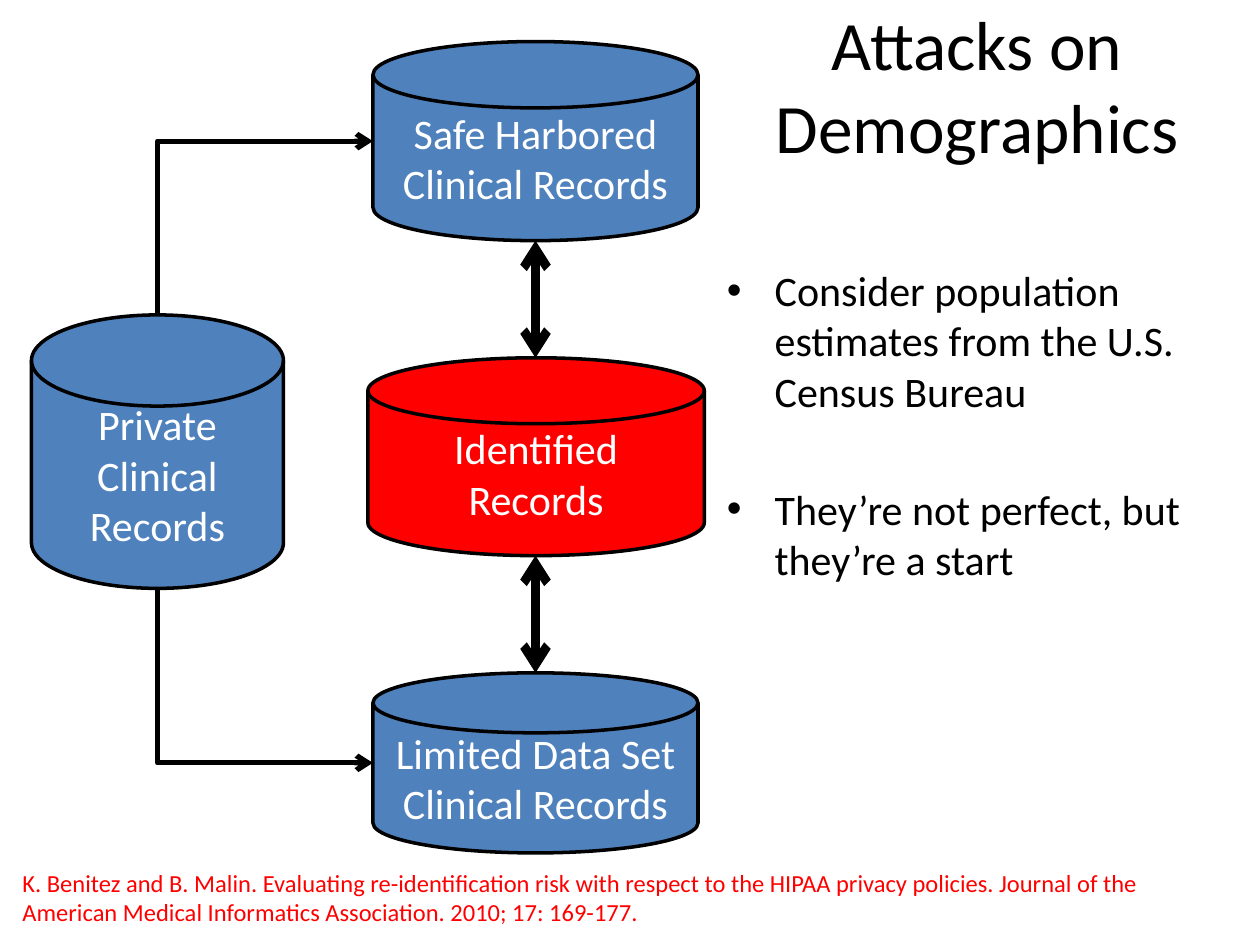
from dataclasses import dataclass

from pptx import Presentation
from pptx import util as u
from pptx.dml.color import RGBColor
from pptx.enum import shapes, text
from pptx.oxml.ns import qn
from lxml import etree

COLORS = {"black": "000000", "white": "FFFFFF", "blue": "4F81BD", "red": "FF0000"}


@dataclass(frozen=True)
class Store:
    lines: tuple[str, ...]
    left: float
    top: float
    width: float
    height: float
    fill: str = "blue"

    @property
    def center(self) -> float:
        return self.left + self.width / 2

    @property
    def middle(self) -> float:
        return self.top + self.height / 2

    @property
    def bottom(self) -> float:
        return self.top + self.height


SAFE = Store(("Safe Harbored", "Clinical Records"), 2.96, 0.33, 2.58, 1.58)
PRIVATE = Store(("Private", "Clinical Records"), 0.25, 2.5, 2, 2.17)
LIMITED = Store(("Limited Data Set", "Clinical Records"), 2.96, 5.34, 2.58, 1.43)
IDENTIFIED = Store(("Identified", "Records"), 2.92, 2.84, 2.67, 1.57, "red")


def color(name: str) -> RGBColor:
    return RGBColor.from_string(COLORS[name])


def write(frame, lines, *, size: float = 24, ink: str = "black",
          align=text.PP_ALIGN.LEFT, anchor=text.MSO_ANCHOR.TOP,
          bullet: bool = False, gap: float = 0) -> None:
    frame.word_wrap = True
    frame.auto_size = text.MSO_AUTO_SIZE.NONE
    frame.vertical_anchor = anchor
    for index, line in enumerate(lines):
        para = frame.add_paragraph() if index else frame.paragraphs[0]
        para.text = line
        para.alignment = align
        para.space_before = u.Pt(gap if index else 0)
        if bullet:
            properties = para._p.get_or_add_pPr()
            properties.set("marL", str(u.Inches(0.38)))
            properties.set("indent", str(-u.Inches(0.38)))
            etree.SubElement(properties, qn("a:buFont"), typeface="Arial")
            etree.SubElement(properties, qn("a:buChar"), char="•")
        for span in para.runs:
            span.font.name = "Calibri"
            span.font.size = u.Pt(size)
            span.font.color.rgb = color(ink)


def place(shape, left: float, top: float, width: float, height: float) -> None:
    shape.left, shape.top = u.Inches(left), u.Inches(top)
    shape.width, shape.height = u.Inches(width), u.Inches(height)


def draw_store(page, store: Store) -> None:
    disk = page.shapes.add_shape(
        shapes.MSO_SHAPE.FLOWCHART_MAGNETIC_DISK,
        u.Inches(store.left), u.Inches(store.top),
        u.Inches(store.width), u.Inches(store.height))
    disk.shadow.inherit = False
    disk.fill.solid()
    disk.fill.fore_color.rgb = color(store.fill)
    disk.line.color.rgb = color("black")
    disk.line.width = u.Pt(2)
    write(disk.text_frame, store.lines, ink="white",
          align=text.PP_ALIGN.CENTER, anchor=text.MSO_ANCHOR.MIDDLE)


def draw_arrow(page, start: tuple[float, float], end: tuple[float, float], *,
               weight: float, heads: tuple[str, ...], bent: bool = False) -> None:
    kind = shapes.MSO_CONNECTOR.ELBOW if bent else shapes.MSO_CONNECTOR.STRAIGHT
    arrow = page.shapes.add_connector(kind, *map(u.Inches, start + end))
    arrow.line.color.rgb = color("black")
    arrow.line.width = u.Pt(weight)
    properties = arrow._element.spPr
    if bent:
        properties.find(qn("a:prstGeom")).set("prst", "bentConnector2")
    line = properties.find(qn("a:ln"))
    for head in heads:
        etree.SubElement(line, qn(head), type="arrow")
    etree.SubElement(properties, qn("a:effectLst"))


def add_text(page, area: tuple[float, float, float, float], lines, **style) -> None:
    box = page.shapes.add_textbox(*map(u.Inches, area))
    write(box.text_frame, lines, **style)


def main() -> None:
    deck = Presentation()
    deck.slide_width, deck.slide_height = u.Inches(10), u.Inches(7.5)
    page = deck.slides.add_slide(deck.slide_layouts[5])

    title = page.shapes.title
    place(title, 5.42, -0.08, 4.67, 1.5)
    write(title.text_frame, ["Attacks on\vDemographics"], size=39.6,
          align=text.PP_ALIGN.CENTER, anchor=text.MSO_ANCHOR.MIDDLE)

    add_text(page, (5.67, 2.05, 4.17, 4.95),
             ["Consider population estimates from the U.S. Census Bureau",
              "They’re not perfect, but they’re a start"],
             bullet=True, gap=38.5)

    for store in (SAFE, PRIVATE, LIMITED, IDENTIFIED):
        draw_store(page, store)

    for store, edge in ((SAFE, PRIVATE.top), (LIMITED, PRIVATE.bottom)):
        draw_arrow(page, (store.left, store.middle), (PRIVATE.center, edge),
                   weight=3, heads=("a:headEnd",), bent=True)
    for upper, lower in ((SAFE, IDENTIFIED), (IDENTIFIED, LIMITED)):
        draw_arrow(page, (SAFE.center, upper.bottom), (SAFE.center, lower.top),
                   weight=5, heads=("a:headEnd", "a:tailEnd"))

    add_text(page, (0.08, 6.84, 9.67, 0.57),
             ["K. Benitez and B. Malin. Evaluating re-identification risk with "
              "respect to the HIPAA privacy policies. Journal of the American "
              "Medical Informatics Association. 2010; 17: 169-177."],
             size=14, ink="red")

    deck.save("out.pptx")


if __name__ == "__main__":
    main()
